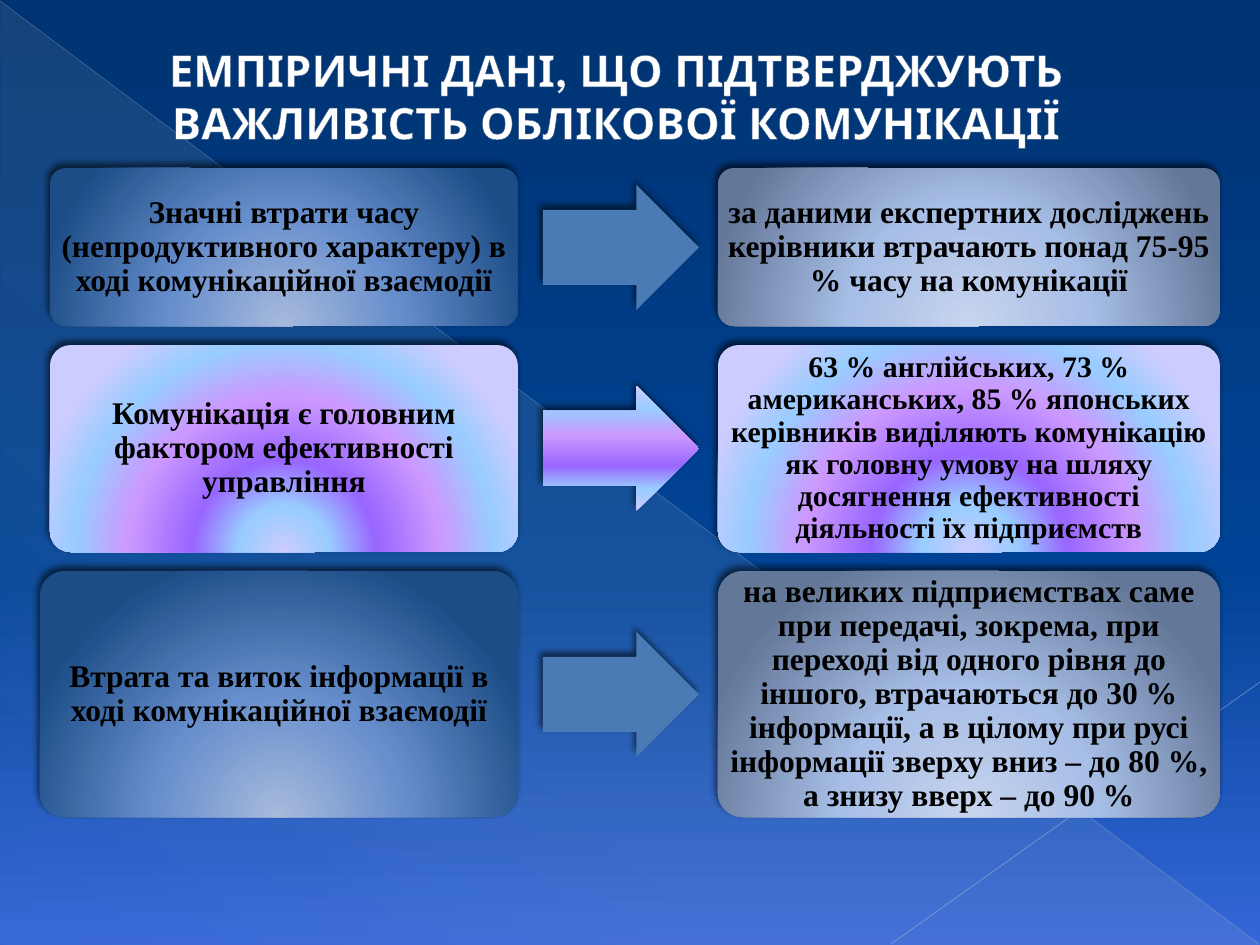
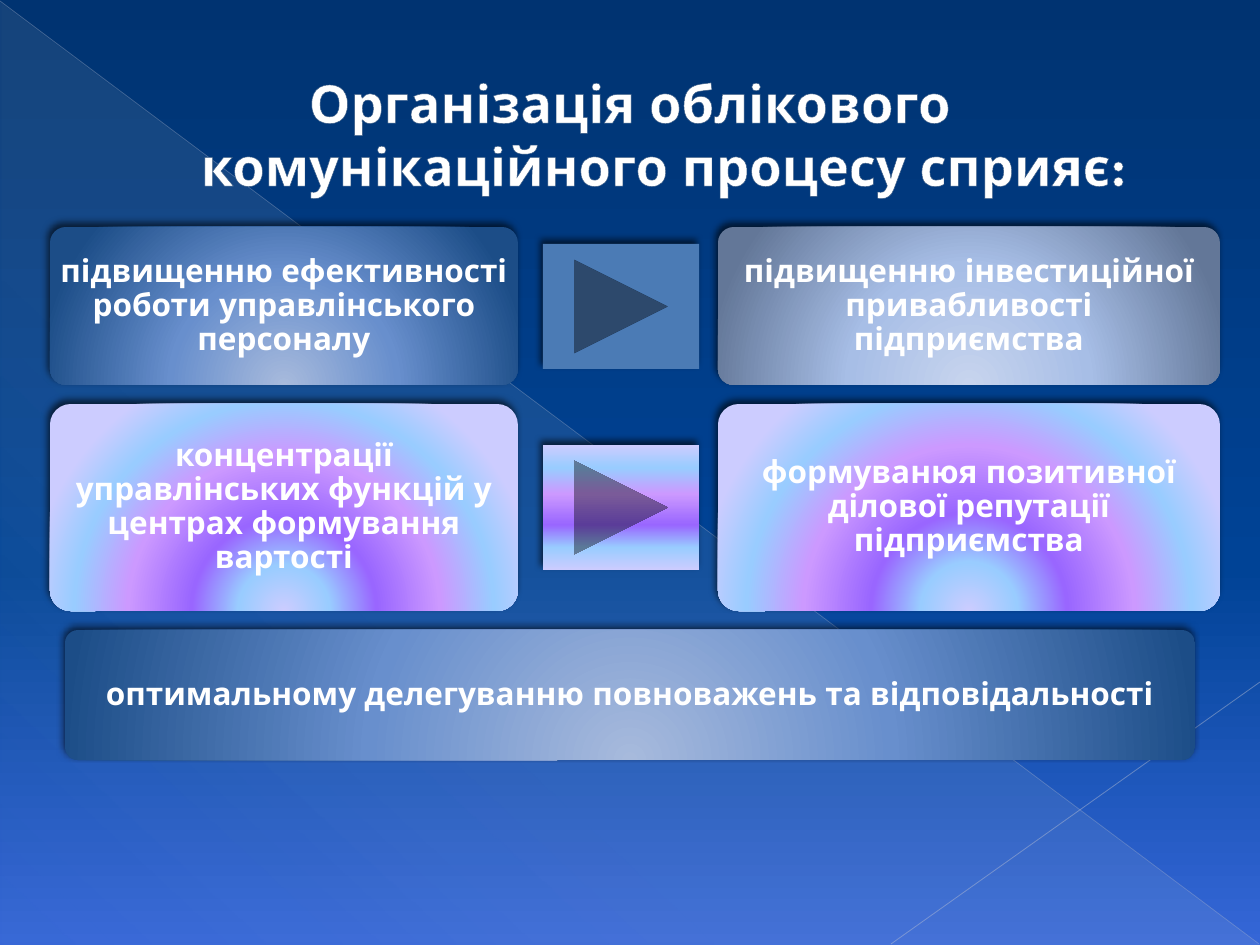
from lxml.etree import SubElement
from pptx import Presentation
from pptx.dml.color import RGBColor
from pptx.enum.shapes import MSO_CONNECTOR, MSO_SHAPE
from pptx.enum.text import MSO_ANCHOR, PP_ALIGN
from pptx.oxml.ns import qn
from pptx.util import Pt

EMU_PER_PX = 914400 / 126
SLIDE_WIDTH, SLIDE_HEIGHT = 1260, 945

WHITE = RGBColor(0xFF, 0xFF, 0xFF)
BLACK = RGBColor(0x00, 0x00, 0x00)
NAVY = RGBColor(0x00, 0x33, 0x71)
ROYAL = RGBColor(0x00, 0x43, 0x96)
SKY = RGBColor(0x35, 0x66, 0xD7)
IVORY = RGBColor(0xEE, 0xEC, 0xE1)
DIAGONAL_GREY = RGBColor(0xAD, 0xB6, 0xCE)
CORNER_GREY = RGBColor(0xB6, 0xBE, 0xD3)
TITLE_OUTLINE = RGBColor(0x37, 0x59, 0x83)
STEEL = RGBColor(0x4B, 0x7B, 0xB5)
LILAC = RGBColor(0xCC, 0xCC, 0xFF)
ICE = RGBColor(0x99, 0xCC, 0xFF)
VIOLET = RGBColor(0x99, 0x66, 0xFF)
ORCHID = RGBColor(0xCC, 0x99, 0xFF)

# Gradient stops: position and colour in percent, with an optional opacity
BACKGROUND = [(0, NAVY), (60, ROYAL), (100, SKY)]
VEIL = [(0, IVORY, 10), (70, IVORY, 8), (100, IVORY, 1)]
BLUE = [(0, RGBColor(0xA7, 0xBA, 0xDC)), (46, RGBColor(0x68, 0x8F, 0xCD)),
        (100, RGBColor(0x1C, 0x4D, 0x87))]
PALE = [(0, RGBColor(0xC7, 0xD4, 0xEE)), (46, RGBColor(0xA7, 0xBE, 0xE6)),
        (100, RGBColor(0x63, 0x77, 0x98))]
RAINBOW = [(0, LILAC), (18, ICE), (36, VIOLET), (61, ORCHID), (82, ICE), (100, LILAC)]

TITLE_FONT = "League Spartan"
BODY_FONT = "Times New Roman"

LEFT_BOX, LEFT_BOX_END = 50, 518
RIGHT_BOX, RIGHT_BOX_WIDTH = 718, 502
MARK_LEFT, MARK_WIDTH, MARK_HEIGHT = 543, 156, 125
ROW_GAP = 19
ROW_HEIGHTS = [158, 207, 246]
BOX_INSET = 9


def px(length):
    return round(length * EMU_PER_PX)


def add_color(parent, color, opacity=100):
    element = SubElement(parent, qn("a:srgbClr"), val=str(color))
    if opacity < 100:
        SubElement(element, qn("a:alpha"), val=str(opacity * 1000))


def set_gradient(fill, owner, stops, angle=None):
    """Fill with a linear gradient, or without an angle one that spreads from below."""
    fill.gradient()
    gradient = next(owner.iter(qn("a:gradFill")))
    for child in list(gradient):
        gradient.remove(child)
    stop_list = SubElement(gradient, qn("a:gsLst"))
    for position, *color in stops:
        add_color(SubElement(stop_list, qn("a:gs"), pos=str(position * 1000)), *color)
    if angle is None:
        circle = SubElement(gradient, qn("a:path"), path="circle")
        SubElement(circle, qn("a:fillToRect"), l="50000", t="155000", r="50000", b="-55000")
    else:
        SubElement(gradient, qn("a:lin"), ang=str(angle * 60000), scaled="0")


def add_shadow(shape):
    effects = shape._element.spPr.find(qn("a:effectLst"))
    shadow = SubElement(effects, qn("a:outerShdw"), blurRad=str(Pt(4)), dist=str(Pt(3)),
                        dir=str(245 * 60000), algn="tl", rotWithShape="0")
    add_color(shadow, BLACK, 60)


class Deck:
    def __init__(self):
        self.presentation = Presentation()
        self.presentation.slide_width = px(SLIDE_WIDTH)
        self.presentation.slide_height = px(SLIDE_HEIGHT)

    def start_slide(self, font_name, font_color):
        self.font_name, self.font_color = font_name, font_color
        self.slide = self.presentation.slides.add_slide(self.presentation.slide_layouts[6])
        set_gradient(self.slide.background.fill, self.slide._element, BACKGROUND, 90)
        veil = self.shape(MSO_SHAPE.RIGHT_TRIANGLE, 1, 2, 1259, 943)
        set_gradient(veil.fill, veil._element, VEIL, 133)
        self.line((0, 1), (1259, 944), DIAGONAL_GREY, 0.39, 35)
        self.line((1260, 682), (891, 944), CORNER_GREY, 0.47, 45)

    def shape(self, kind, left, top, width, height):
        shape = self.slide.shapes.add_shape(kind, px(left), px(top), px(width), px(height))
        shape.line.fill.background()
        shape.shadow.inherit = False
        return shape

    def line(self, start, end, color, width, opacity):
        connector = self.slide.shapes.add_connector(
            MSO_CONNECTOR.STRAIGHT, *map(px, start + end))
        connector.line.color.rgb = color
        connector.line.width = Pt(width)
        properties = connector._element.spPr
        color_element = next(properties.iter(qn("a:srgbClr")))
        SubElement(color_element, qn("a:alpha"), val=str(opacity * 1000))
        SubElement(properties, qn("a:effectLst"))

    def text(self, frame, text, size, font_name, color):
        frame.word_wrap = True
        paragraph = frame.paragraphs[0]
        paragraph.text = text
        paragraph.alignment = PP_ALIGN.CENTER
        font = paragraph.font
        font.name, font.size, font.bold = font_name, Pt(size), True
        font.color.rgb = color
        return paragraph

    def title(self, text, left, top, width, height, size, anchor, hanging=0):
        box = self.slide.shapes.add_textbox(px(left), px(top), px(width), px(height))
        box.text_frame.vertical_anchor = anchor
        paragraph = self.text(box.text_frame, text, size, TITLE_FONT, WHITE)
        properties = paragraph._p.pPr
        if hanging:
            properties.set("marL", str(px(hanging)))
            properties.set("indent", str(-px(hanging)))
        defaults = properties.find(qn("a:defRPr"))
        outline = SubElement(defaults, qn("a:ln"), w=str(Pt(0.5)))
        add_color(SubElement(outline, qn("a:solidFill")), TITLE_OUTLINE)
        defaults.insert(0, outline)

    def box(self, text, left, top, width, height, stops, size=18):
        box = self.shape(MSO_SHAPE.ROUNDED_RECTANGLE, left, top, width, height)
        box.adjustments[0] = 0.1
        set_gradient(box.fill, box._element, stops)
        add_shadow(box)
        frame = box.text_frame
        frame.vertical_anchor = MSO_ANCHOR.MIDDLE
        # The rounded corners already hold the text back by 0.03 of the height
        inset = px(BOX_INSET - round(height * 0.03))
        frame.margin_left = frame.margin_right = inset
        frame.margin_top = frame.margin_bottom = inset
        paragraph = self.text(frame, text, size, self.font_name, self.font_color)
        paragraph.line_spacing = 0.9

    def mark(self, kind, middle, rainbow):
        mark = self.shape(kind, MARK_LEFT, middle - MARK_HEIGHT // 2, MARK_WIDTH, MARK_HEIGHT)
        if kind == MSO_SHAPE.RIGHT_ARROW:
            mark.adjustments[0] = 0.6
        if rainbow:
            set_gradient(mark.fill, mark._element, RAINBOW, 270)
        else:
            mark.fill.solid()
            mark.fill.fore_color.rgb = STEEL
        add_shadow(mark)

    def rows(self, top, mark_kind, rows):
        """Stack pairs of boxes joined by a mark and return the top of the next row."""
        for index, (height, row) in enumerate(zip(ROW_HEIGHTS, rows)):
            left_text, right_text, left, right_size = row
            rainbow = index == 1
            self.box(left_text, left, top, LEFT_BOX_END - left, height,
                     RAINBOW if rainbow else BLUE)
            self.mark(mark_kind, top + height // 2, rainbow)
            self.box(right_text, RIGHT_BOX, top, RIGHT_BOX_WIDTH, height,
                     RAINBOW if rainbow else PALE, right_size)
            top += height + ROW_GAP
        return top


def add_evidence_slide(deck):
    deck.start_slide(BODY_FONT, BLACK)
    deck.rows(168, MSO_SHAPE.RIGHT_ARROW, [
        ("Значні втрати часу (непродуктивного характеру) в ході комунікаційної взаємодії",
         "за даними експертних досліджень керівники втрачають понад 75-95 % часу "
         "на комунікації", LEFT_BOX, 18),
        ("Комунікація є головним фактором ефективності управління",
         "63 % англійських, 73 % американських, 85 % японських керівників виділяють "
         "комунікацію як головну умову на шляху досягнення ефективності діяльності "
         "їх підприємств", LEFT_BOX, 17),
        ("Втрата та виток інформації в ході комунікаційної взаємодії",
         "на великих підприємствах саме при передачі, зокрема, при переході від одного "
         "рівня до іншого, втрачаються до 30 % інформації, а в цілому при русі "
         "інформації зверху вниз – до 80 %, а знизу вверх – до 90 %",
         LEFT_BOX - 10, 18),
    ])
    deck.title("ЕМПІРИЧНІ ДАНІ, ЩО ПІДТВЕРДЖУЮТЬ ВАЖЛИВІСТЬ ОБЛІКОВОЇ КОМУНІКАЦІЇ",
               84, 37, 1064, 118, 25, MSO_ANCHOR.TOP)


def add_benefits_slide(deck):
    deck.start_slide(TITLE_FONT, WHITE)
    next_top = deck.rows(227, MSO_SHAPE.ACTION_BUTTON_FORWARD_OR_NEXT, [
        ("підвищенню ефективності роботи управлінського персоналу",
         "підвищенню інвестиційної привабливості підприємства", LEFT_BOX, 18),
        ("концентрації управлінських функцій у центрах формування вартості",
         "формуванюя позитивної ділової репутації підприємства", LEFT_BOX, 18),
    ])
    deck.box("оптимальному делегуванню повноважень та відповідальності",
             65, next_top, 1130, 130, BLUE)
    deck.title("Організація облікового комунікаційного процесу сприяє:",
               63, 37, 1134, 193, 30, MSO_ANCHOR.MIDDLE, hanging=67)


def main():
    deck = Deck()
    add_evidence_slide(deck)
    add_benefits_slide(deck)
    deck.presentation.save("out.pptx")


if __name__ == "__main__":
    main()
